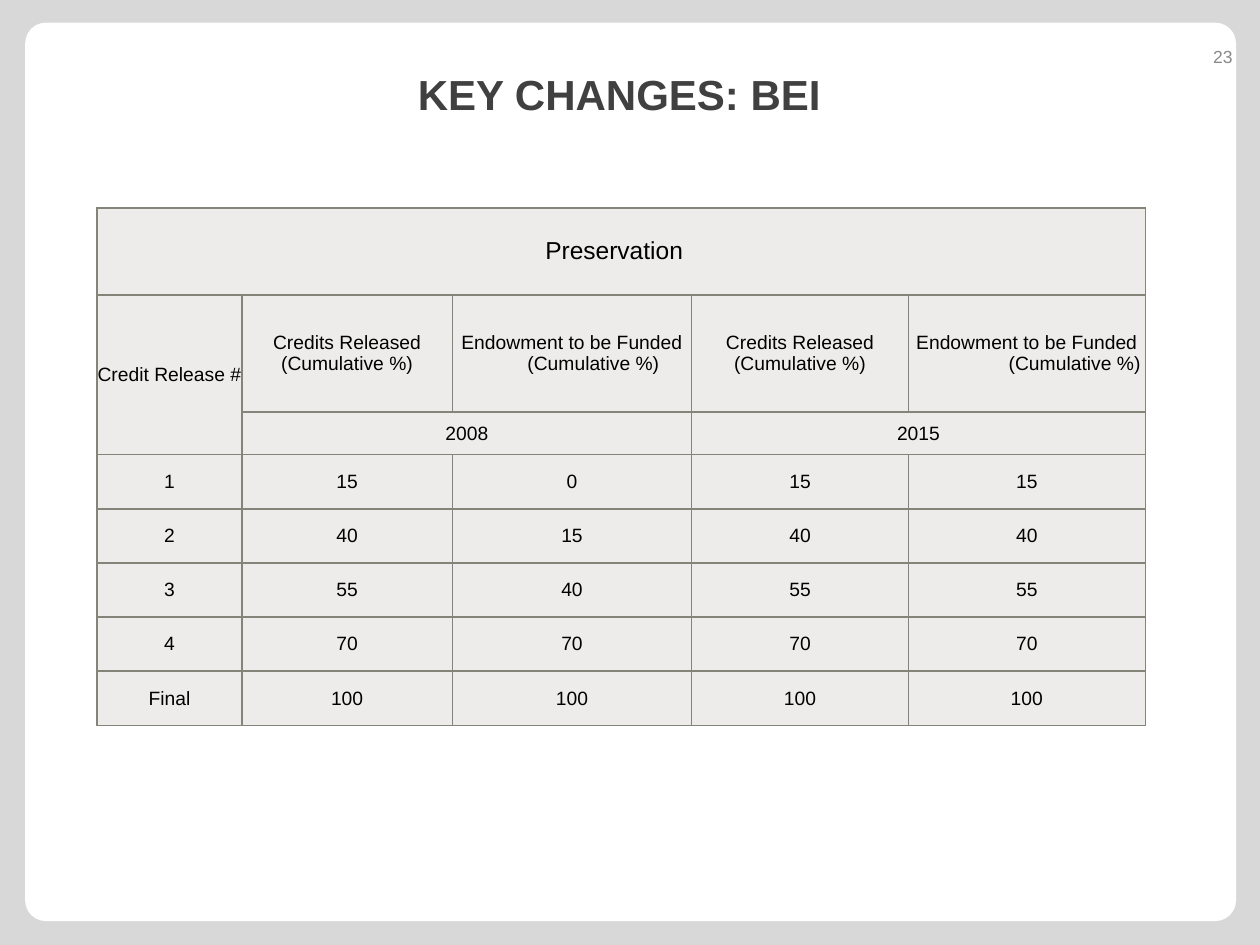
from dataclasses import dataclass

from pptx import Presentation
from pptx.dml.color import RGBColor
from pptx.enum.shapes import MSO_SHAPE as Shape
from pptx.enum.text import MSO_ANCHOR as Anchor, PP_ALIGN as Align
from pptx.oxml import parse_xml
from pptx.oxml.ns import nsdecls
from pptx.util import Inches, Pt


@dataclass(frozen=True)
class Theme:
    font: str = "Arial"
    backdrop: str = "D8D8D8"
    panel: str = "FFFFFF"
    title: str = "404040"
    number: str = "898989"
    text: str = "000000"
    cell: str = "EDECEB"
    border: str = "83847A"
    title_size: int = 24
    caption_size: int = 14
    cell_size: int = 11
    number_size: int = 10


THEME = Theme()
WIDTH, HEIGHT = Inches(10), Inches(7.5)

# Column and row sizes in percent of the slide's width and height
COLUMNS = [11.5, 16.7, 19, 17.2, 18.8]
ROWS = [9.2, 12.4, 4.53] + [5.73] * 5

CREDITS = ["Credits Released (Cumulative %)"]
ENDOWMENT = ["Endowment to be Funded", "(Cumulative %)"]
RELEASES = [
    ("1", 15, 0, 15, 15),
    ("2", 40, 15, 40, 40),
    ("3", 55, 40, 55, 55),
    ("4", 70, 70, 70, 70),
    ("Final", 100, 100, 100, 100),
]


def across(percent):
    return round(WIDTH * percent / 100)


def down(percent):
    return round(HEIGHT * percent / 100)


def place(left, top, width, height):
    """Turn percentages of the slide into a position and size."""
    return across(left), down(top), across(width), down(height)


def write(paragraph, text, size, color, align=Align.CENTER, bold=False):
    paragraph.text = text
    paragraph.alignment = align
    for run in paragraph.runs:
        font = run.font
        font.name, font.size, font.bold = THEME.font, Pt(size), bold
        font.color.rgb = RGBColor.from_string(color)


def add_panel(slide):
    panel = slide.shapes.add_shape(Shape.ROUNDED_RECTANGLE, *place(2, 2.4, 96.1, 95.07))
    panel.adjustments[0] = 0.023
    panel.shadow.inherit = False
    panel.fill.solid()
    panel.fill.fore_color.rgb = RGBColor.from_string(THEME.panel)
    panel.line.fill.background()


def add_label(slide, area, *text_style, **options):
    frame = slide.shapes.add_textbox(*place(*area)).text_frame
    frame.word_wrap = True
    frame.vertical_anchor = Anchor.MIDDLE
    write(frame.paragraphs[0], *text_style, **options)


def style_cell(cell):
    cell.margin_left = cell.margin_right = cell.margin_top = cell.margin_bottom = 0
    cell.vertical_anchor = Anchor.MIDDLE
    properties = cell._tc.get_or_add_tcPr()
    for side in ("lnL", "lnR", "lnT", "lnB"):
        properties.append(parse_xml(
            f'<a:{side} {nsdecls("a")} w="{Pt(1)}"><a:solidFill>'
            f'<a:srgbClr val="{THEME.border}"/></a:solidFill></a:{side}>'))
    cell.fill.solid()
    cell.fill.fore_color.rgb = RGBColor.from_string(THEME.cell)


def fill_cell(cell, lines, size=THEME.cell_size, indent=0):
    """Write centred lines; the indent, in inches, moves the later ones right."""
    frame = cell.text_frame
    for index, line in enumerate(lines):
        paragraph = frame.add_paragraph() if index else frame.paragraphs[0]
        write(paragraph, line, size, THEME.text)
        if index:
            paragraph._p.get_or_add_pPr().set("marL", str(Inches(indent)))


def add_release_table(slide):
    area = place(7.7, 22, sum(COLUMNS), sum(ROWS))
    table = slide.shapes.add_table(len(ROWS), len(COLUMNS), *area).table
    table.first_row = table.horz_banding = False
    for column, share in zip(table.columns, COLUMNS):
        column.width = across(share)
    for row, share in zip(table.rows, ROWS):
        row.height = down(share)
    for cell in table.iter_cells():
        style_cell(cell)

    for first, last in [((0, 0), (0, 4)), ((1, 0), (2, 0)),
                        ((2, 1), (2, 2)), ((2, 3), (2, 4))]:
        table.cell(*first).merge(table.cell(*last))

    caption = table.cell(0, 0)
    fill_cell(caption, ["Preservation"], THEME.caption_size)
    caption.margin_right = Inches(0.11)
    fill_cell(table.cell(1, 0), ["Credit Release #"])
    for column, year, indent in [(1, "2008", 0.34), (3, "2015", 0.76)]:
        fill_cell(table.cell(1, column), CREDITS)
        fill_cell(table.cell(1, column + 1), ENDOWMENT, indent=indent)
        fill_cell(table.cell(2, column), [year])
    for row, release in enumerate(RELEASES, start=3):
        for column, value in enumerate(release):
            fill_cell(table.cell(row, column), [str(value)])


def main():
    deck = Presentation()
    deck.slide_width, deck.slide_height = WIDTH, HEIGHT
    slide = deck.slides.add_slide(deck.slide_layouts[6])
    slide.background.fill.solid()
    slide.background.fill.fore_color.rgb = RGBColor.from_string(THEME.backdrop)

    add_panel(slide)
    add_label(slide, (3.3, 4, 91.7, 11.73), "KEY CHANGES: BEI",
              THEME.title_size, THEME.title, bold=True)
    add_label(slide, (90.8, 3.33, 8, 5.33), "23",
              THEME.number_size, THEME.number, align=Align.RIGHT)
    add_release_table(slide)
    deck.save("out.pptx")


if __name__ == "__main__":
    main()
